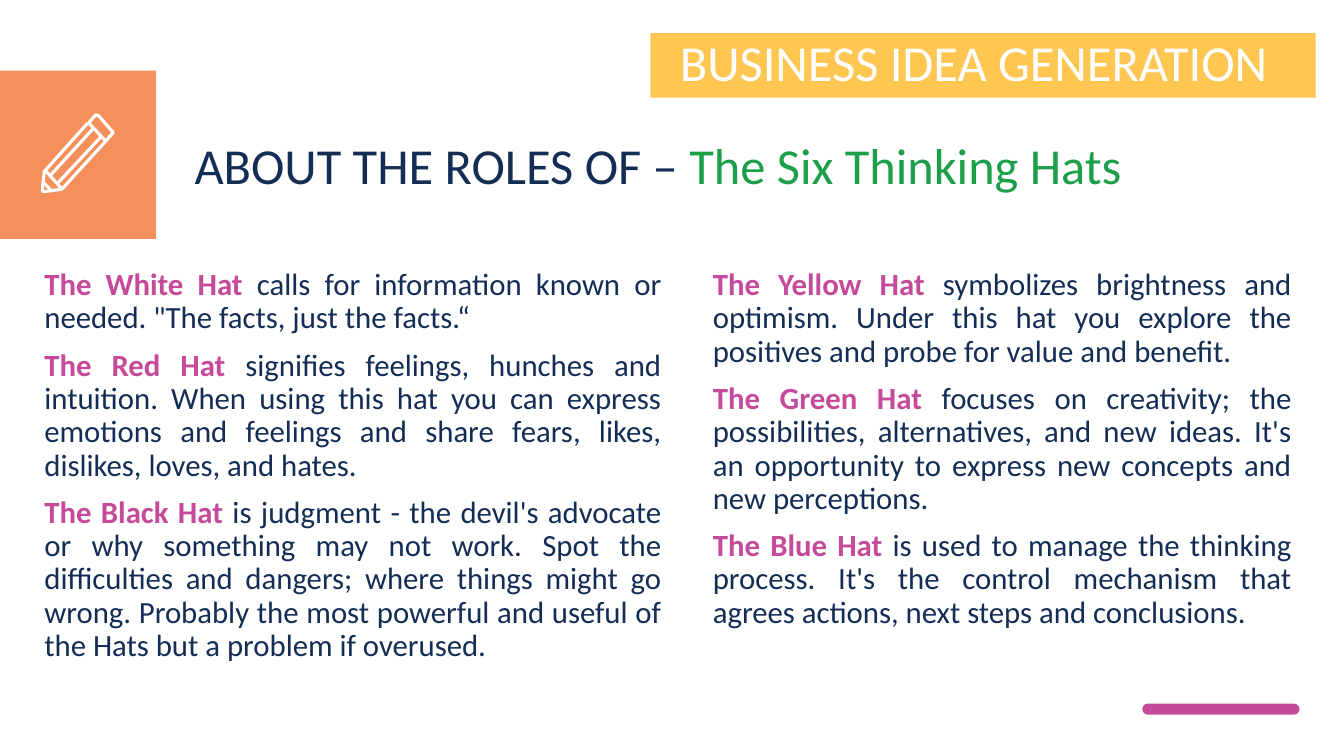
from dataclasses import dataclass

from lxml import etree
from pptx import Presentation
from pptx.dml.color import RGBColor
from pptx.enum import shapes, text
from pptx.oxml import ns
from pptx.util import Inches, Pt


@dataclass(frozen=True)
class Theme:
    font: str = "Calibri"
    heading: int = 36
    body: int = 22
    navy: str = "142D55"
    green: str = "1C9F49"
    magenta: str = "C54A9A"
    orange: str = "F26B27"
    yellow: str = "FFC652"
    white: str = "FFFFFF"


theme = Theme()


def add_block(slide, preset, box, color):
    shape = slide.shapes.add_shape(preset, *map(Inches, box))
    shape.shadow.inherit = False
    shape.fill.solid()
    shape.fill.fore_color.rgb = RGBColor.from_string(color)
    shape.line.fill.background()
    return shape


def write_paragraph(paragraph, parts, size, alignment):
    """Fill a paragraph with (wording, colour, bold) parts and drop its bullet."""
    paragraph.alignment = alignment
    paragraph.line_spacing = 0.9
    properties = paragraph._p.get_or_add_pPr()
    properties.set("marL", "0")
    properties.set("indent", "0")
    etree.SubElement(properties, ns.qn("a:buNone"))
    for wording, color, bold in parts:
        run = paragraph.add_run()
        run.text = wording
        run.font.name = theme.font
        run.font.size = Pt(size)
        run.font.bold = bold
        run.font.color.rgb = RGBColor.from_string(color)


presentation = Presentation()
presentation.slide_width = Inches(13.33)
presentation.slide_height = Inches(7.5)
slide = presentation.slides.add_slide(presentation.slide_layouts.get_by_name("Two Content"))
title, left_column, right_column = slide.placeholders

# Accent blocks
icon_tile = add_block(slide, shapes.MSO_SHAPE.RECTANGLE, (0, 0.7, 1.55, 1.67), theme.orange)
tile_color = icon_tile.fill._xPr.find(ns.qn("a:solidFill"))[0]
etree.SubElement(tile_color, ns.qn("a:alpha"), val="75000")
footer_bar = add_block(slide, shapes.MSO_SHAPE.ROUNDED_RECTANGLE, (11.33, 6.98, 1.56, 0.11), theme.magenta)
footer_bar.adjustments[0] = 0.5

# Pencil icon: (points in hundredths of an inch, closed)
pencil_strokes = [
    ([(111, 130), (98, 115), (96, 114), (95, 114), (94, 115), (88, 122),
      (105, 140), (111, 133), (112, 132), (112, 131)], True),
    ([(100, 136), (57, 182)], False),
    ([(87, 122), (45, 169), (44, 170), (42, 187), (42, 189), (43, 190),
      (44, 190), (60, 188), (62, 187), (104, 141)], False),
    ([(50, 174), (92, 128)], False),
    ([(50, 188), (43, 181)], False),
    ([(45, 169), (61, 187)], False),
]
pencil = slide.shapes.add_group_shape()
for points, closed in pencil_strokes:
    builder = pencil.shapes.build_freeform(*points[0], scale=Inches(0.01))
    builder.add_line_segments(points[1:], close=closed)
    stroke = builder.convert_to_shape()
    stroke.shadow.inherit = False
    stroke.fill.background()
    stroke.line.color.rgb = RGBColor.from_string(theme.white)
    stroke.line.width = Pt(2.25)

# Title and the two columns of hats
white_black_hats = [
    ("The White Hat ", "calls for information known or needed. \"The facts, just the facts.“"),
    ("The Red Hat ", "signifies feelings, hunches and intuition. When using this hat you can express "
     "emotions and feelings and share fears, likes, dislikes, loves, and hates."),
    ("The Black Hat ", "is judgment - the devil's advocate or why something may not work. Spot the "
     "difficulties and dangers; where things might go wrong. Probably the most powerful and useful "
     "of the Hats but a problem if overused."),
]
yellow_blue_hats = [
    ("The Yellow Hat ", "symbolizes brightness and optimism. Under this hat you explore the positives "
     "and probe for value and benefit."),
    ("The Green Hat ", "focuses on creativity; the possibilities, alternatives, and new ideas. It's an "
     "opportunity to express new concepts and new perceptions."),
    ("The Blue Hat ", "is used to manage the thinking process. It's the control mechanism that agrees "
     "actions, next steps and conclusions."),
]
placements = [
    (title, (1.83, 1.35, 11.09, 0.76)),
    (left_column, (0.34, 2.62, 6.32, 4.88)),
    (right_column, (6.97, 2.62, 5.94, 4.88)),
]
for placeholder, box in placements:
    placeholder.left, placeholder.top, placeholder.width, placeholder.height = map(Inches, box)
    placeholder.text_frame.auto_size = text.MSO_AUTO_SIZE.NONE
    placeholder.text_frame.vertical_anchor = text.MSO_ANCHOR.TOP
    placeholder.text_frame.word_wrap = True

heading_parts = [("ABOUT THE ROLES OF – ", theme.navy, False), ("The Six Thinking Hats", theme.green, False)]
write_paragraph(title.text_frame.paragraphs[0], heading_parts, theme.heading, text.PP_ALIGN.LEFT)

for column, hats in [(left_column, white_black_hats), (right_column, yellow_blue_hats)]:
    for index, (hat, role) in enumerate(hats):
        frame = column.text_frame
        paragraph = frame.add_paragraph() if index else frame.paragraphs[0]
        paragraph.space_before = Pt(10 if index else 0)
        parts = [(hat, theme.magenta, True), (role, theme.navy, False)]
        write_paragraph(paragraph, parts, theme.body, text.PP_ALIGN.JUSTIFY)

# Section banner
banner = add_block(slide, shapes.MSO_SHAPE.RECTANGLE, (6.45, 0.33, 6.6, 0.64), theme.yellow)
banner.text_frame.margin_right = Inches(0.28)
banner.text_frame.vertical_anchor = text.MSO_ANCHOR.MIDDLE
write_paragraph(banner.text_frame.paragraphs[0], [("BUSINESS IDEA GENERATION", theme.white, False)],
                theme.heading, text.PP_ALIGN.CENTER)

presentation.save("out.pptx")
